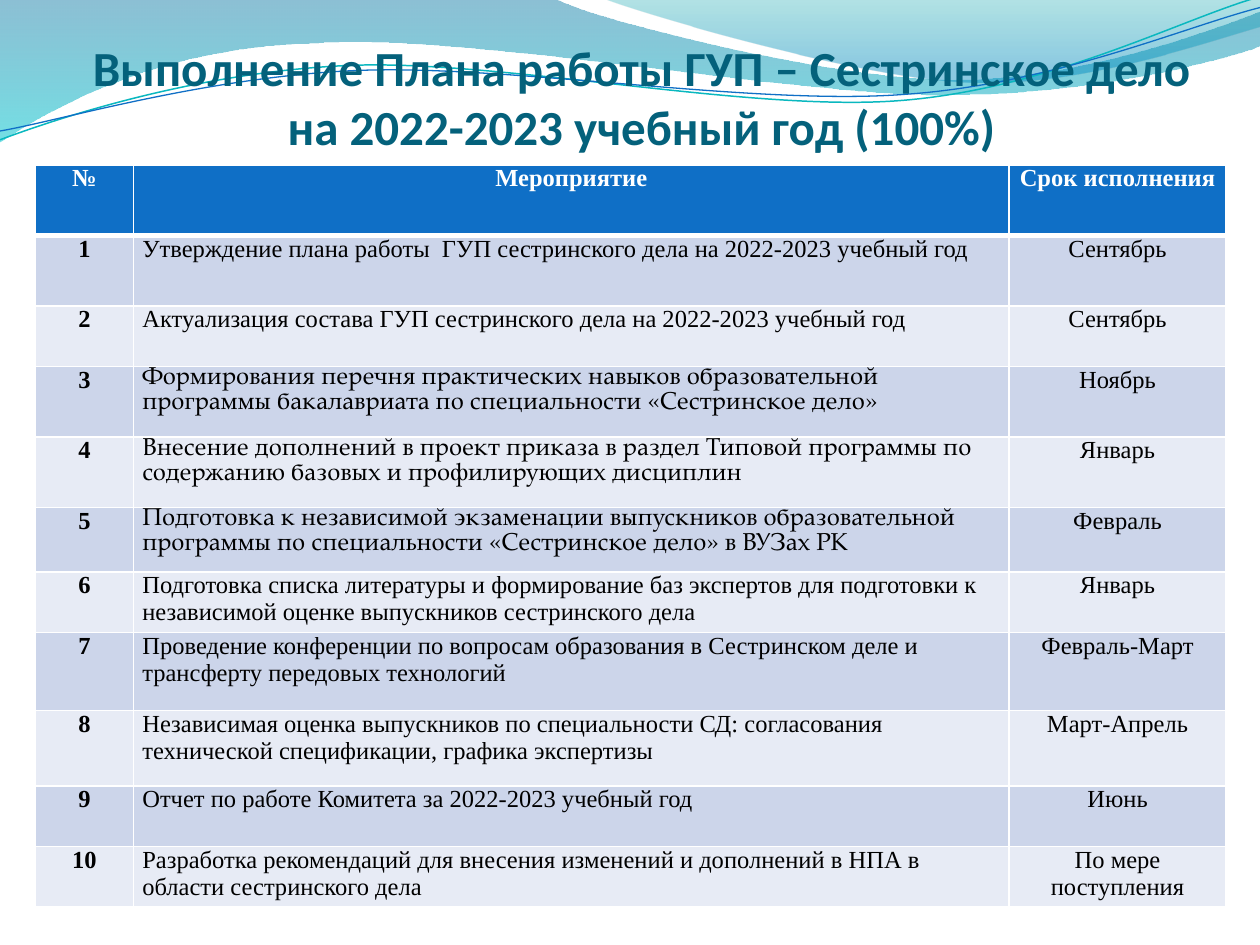
import pptx
import pptx.dml.color
import pptx.enum.text
import pptx.oxml
import pptx.oxml.ns
import pptx.util
from pptx.util import Inches

COLORS = {
    "title": "04617B", "header": "0F6FC6", "odd": "CCD5EA", "even": "E7EBF5",
    "white": "FFFFFF", "black": "000000", "teal line": "0AB8BF",
    "blue": "0074A1", "aqua": "00C6CF", "teal": "00A1A9", "sky": "008BBF",
}
TITLE_FONT, BODY_FONT, ACCENT_FONT = "Calibri", "Times New Roman", "TeX Gyre Pagella"
CENTER = pptx.enum.text.PP_ALIGN.CENTER
LEFT = pptx.enum.text.PP_ALIGN.LEFT
NAMESPACE = pptx.oxml.ns.nsdecls("a")

# Outlines: a start point, then points (2 numbers) and cubic curves (6 numbers)
LEFT_WAVE = [
    (0, 0), (4.4, -0.01),
    (4.76, 0.17, 6.64, 0.63, 7.58, 0.63), (8.53, 0.63, 9.58, 0.26, 10, 0.09),
    (10.01, 0.36),
    (9.83, 0.44, 8.7, 0.76, 7.46, 0.75), (6.22, 0.75, 3.82, 0.28, 2.57, 0.34),
    (1.29, 0.36, 0.46, 0.83, -0.01, 1.13), (0, 0),
]
RIGHT_WAVE = [
    (4.79, -0.01),
    (5.09, 0.11, 6.82, 0.62, 7.69, 0.65), (8.56, 0.69, 9.61, 0.32, 10, 0.21),
    (10, 0), (4.79, -0.01),
]
TEAL_CURVE = [
    (0, 1.11), (0.48, 0.93, 1.58, 0.57, 2.77, 0.52),
    (3.95, 0.47, 5.93, 0.89, 7.13, 0.8), (8.33, 0.71, 9.38, 0.15, 9.98, -0.02),
]
BLUE_CURVE = [
    (0, 1.04), (0.47, 0.96, 1.64, 0.61, 2.83, 0.56),
    (4.03, 0.51, 5.97, 0.84, 7.17, 0.75), (8.36, 0.67, 9.41, 0.21, 10, 0.06),
]

COLUMN_WIDTHS = [0.78, 6.95, 1.72]
ROW_HEIGHTS = [0.56, 0.56, 0.48, 0.56, 0.56, 0.51, 0.48, 0.62, 0.6, 0.48, 0.48]
HEADINGS = ("№", "Мероприятие", "Срок исполнения")
ACTIVITIES = [
    ("Утверждение плана работы  ГУП сестринского дела на 2022-2023 учебный год", "Сентябрь"),
    ("Актуализация состава ГУП сестринского дела на 2022-2023 учебный год", "Сентябрь"),
    ("Формирования перечня практических навыков образовательной программы "
     "бакалавриата по специальности «Сестринское дело»", "Ноябрь"),
    ("Внесение дополнений в проект приказа в раздел Типовой программы по "
     "содержанию базовых и профилирующих дисциплин", "Январь"),
    ("Подготовка к независимой экзаменации выпускников образовательной программы "
     "по специальности «Сестринское дело» в ВУЗах РК", "Февраль"),
    ("Подготовка списка литературы и формирование баз экспертов для подготовки к "
     "независимой оценке выпускников сестринского дела", "Январь"),
    ("Проведение конференции по вопросам образования в Сестринском деле и "
     "трансферту передовых технологий", "Февраль-Март"),
    ("Независимая оценка выпускников по специальности СД: согласования "
     "технической спецификации, графика экспертизы", "Март-Апрель"),
    ("Отчет по работе Комитета за 2022-2023 учебный год", "Июнь"),
    ("Разработка рекомендаций для внесения изменений и дополнений в НПА в "
     "области сестринского дела", "По мере поступления"),
]
ACCENT_ROWS = (3, 4, 5)


def color(name):
    return pptx.dml.color.RGBColor.from_string(COLORS[name])


class SlideBuilder:
    def __init__(self, slide):
        self.slide = slide

    def outline(self, outline, closed):
        anchors = [(Inches(segment[-2]), Inches(segment[-1])) for segment in outline]
        builder = self.slide.shapes.build_freeform(*anchors[0])
        builder.add_line_segments(anchors[1:], close=closed)
        shape = builder.convert_to_shape()
        shape.shadow.inherit = False
        # Bend the straight segments that have control points
        lines = list(shape._element.iter(pptx.oxml.ns.qn("a:lnTo")))
        for line, segment in zip(lines, outline[1:]):
            if len(segment) == 6:
                points = "".join(
                    f'<a:pt x="{Inches(x) - shape.left}" y="{Inches(y) - shape.top}"/>'
                    for x, y in zip(segment[::2], segment[1::2]))
                line.getparent().replace(line, pptx.oxml.parse_xml(
                    f'<a:cubicBezTo {NAMESPACE}>{points}</a:cubicBezTo>'))
        return shape

    def wave(self, outline, stops):
        shape = self.outline(outline, True)
        shape.line.fill.background()
        shape.fill.gradient()
        shape.fill.gradient_angle = 270
        for stop, (position, name, opacity) in zip(shape.fill.gradient_stops, stops):
            stop.position = position
            stop.color.rgb = color(name)
        tags = shape._element.spPr.iter(pptx.oxml.ns.qn("a:srgbClr"))
        for tag, (position, name, opacity) in zip(tags, stops):
            tag.append(pptx.oxml.parse_xml(
                f'<a:alpha {NAMESPACE} val="{opacity * 1000}"/>'))

    def curve(self, outline, name, width):
        shape = self.outline(outline, False)
        shape.fill.background()
        shape.line.color.rgb = color(name)
        shape.line.width = pptx.util.Pt(width)

    def format(self, paragraph, font, size, name, bold, alignment):
        paragraph.alignment = alignment
        for run in paragraph.runs:
            run.font.name = font
            run.font.size = pptx.util.Pt(size)
            run.font.bold = bold
            run.font.color.rgb = color(name)

    def title(self, text, left, top, width, height):
        frame = self.slide.shapes.add_textbox(
            Inches(left), Inches(top), Inches(width), Inches(height)).text_frame
        frame.word_wrap = True
        frame.vertical_anchor = pptx.enum.text.MSO_ANCHOR.BOTTOM
        frame.margin_left = frame.margin_right = frame.margin_bottom = 0
        frame.text = text
        # The line break arrives as a vertical tab
        self.format(frame.paragraphs[0], TITLE_FONT, 28, "title", True, CENTER)

    def borders(self, cell, row):
        thick_side = {0: "B", 1: "T"}.get(row)
        properties = cell._tc.get_or_add_tcPr()
        for side in "LRTB":
            width = pptx.util.Pt(3 if side == thick_side else 1)
            properties.append(pptx.oxml.parse_xml(
                f'<a:ln{side} {NAMESPACE} w="{width}"><a:solidFill>'
                f'<a:srgbClr val="{COLORS["white"]}"/></a:solidFill></a:ln{side}>'))

    def cell(self, cell, text, row, column):
        self.borders(cell, row)
        cell.fill.solid()
        cell.fill.fore_color.rgb = color(
            "header" if row == 0 else "odd" if row % 2 else "even")
        cell.margin_left = cell.margin_right = Inches(0.07)
        cell.margin_top = cell.margin_bottom = 0
        cell.text_frame.text = text
        paragraph = cell.text_frame.paragraphs[0]
        accent = column == 1 and row in ACCENT_ROWS
        if accent:
            paragraph.line_spacing = pptx.util.Pt(14.3)
        self.format(paragraph, ACCENT_FONT if accent else BODY_FONT, 14,
                    "black" if row else "white", row == 0 or column == 0,
                    LEFT if row and column == 1 else CENTER)

    def table(self, rows, left, top):
        table = self.slide.shapes.add_table(
            len(rows), len(COLUMN_WIDTHS), Inches(left), Inches(top),
            Inches(sum(COLUMN_WIDTHS)), Inches(sum(ROW_HEIGHTS))).table
        for column, width in zip(table.columns, COLUMN_WIDTHS):
            column.width = Inches(width)
        for row, height in zip(table.rows, ROW_HEIGHTS):
            row.height = Inches(height)
        for row, texts in enumerate(rows):
            for column, text in enumerate(texts):
                self.cell(table.cell(row, column), text, row, column)


def main():
    presentation = pptx.Presentation()
    presentation.slide_width = Inches(10)
    presentation.slide_height = Inches(7.5)
    builder = SlideBuilder(presentation.slides.add_slide(presentation.slide_layouts[6]))

    # Wave decoration
    builder.wave(LEFT_WAVE, [(0, "blue", 45), (1, "aqua", 55)])
    builder.wave(RIGHT_WAVE, [(0, "teal", 30), (0.8, "sky", 45)])
    builder.curve(TEAL_CURVE, "teal line", 0.85)
    builder.curve(BLUE_CURVE, "header", 0.75)

    # Work plan table
    numbered = [(str(number), *activity) for number, activity in enumerate(ACTIVITIES, 1)]
    builder.table([HEADINGS] + numbered, 0.28, 1.31)

    # Title
    builder.title("Выполнение Плана работы ГУП – Сестринское дело\v"
                  "на 2022-2023 учебный год (100%)", 0.59, 0.11, 9, 1.12)

    presentation.save("out.pptx")


if __name__ == "__main__":
    main()
